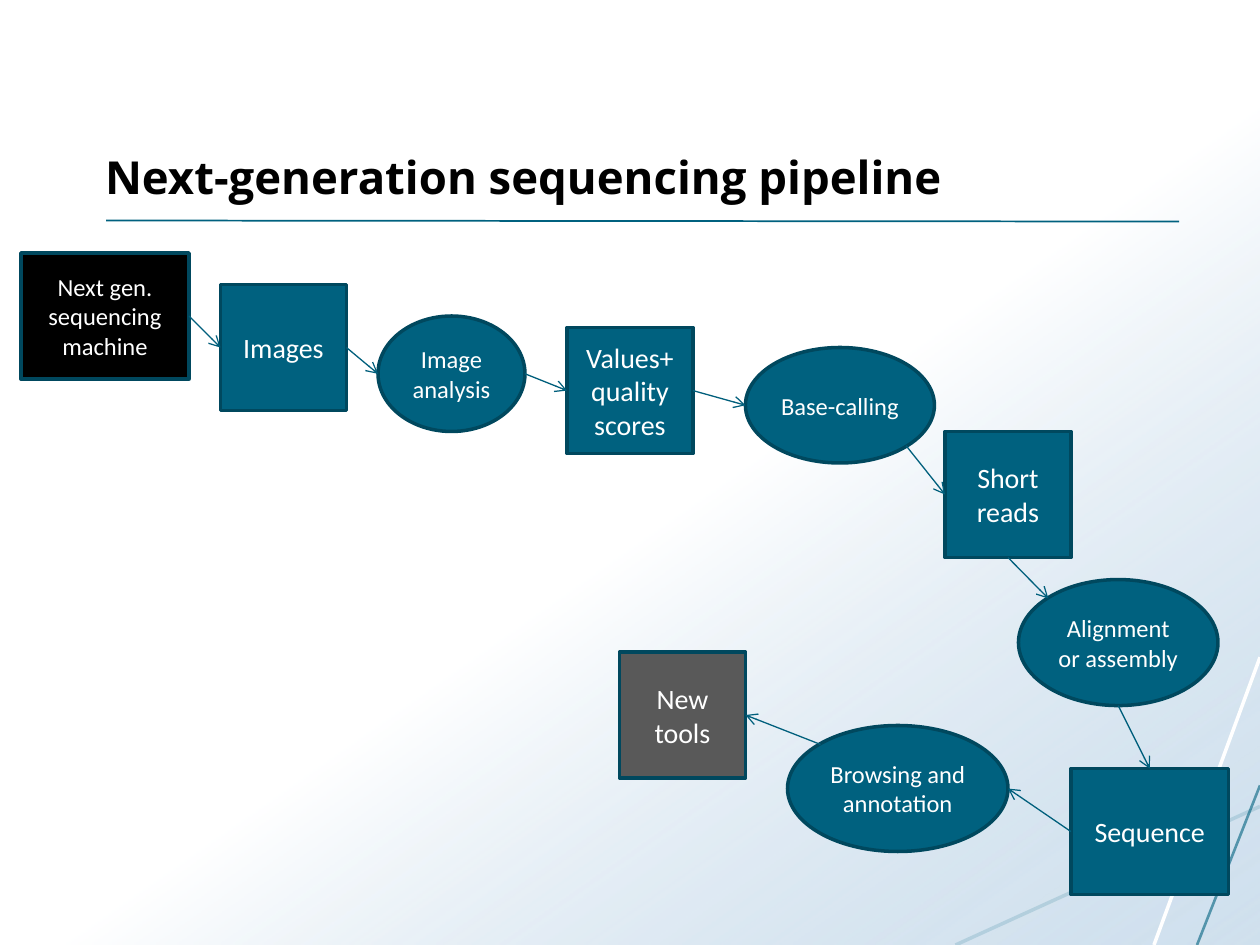
from lxml import etree
from pptx import Presentation
from pptx import util as u
from pptx.dml.color import RGBColor
from pptx.enum import shapes, text
from pptx.oxml.ns import qn

WHITE = RGBColor(0xFF, 0xFF, 0xFF)
BLACK = RGBColor(0x00, 0x00, 0x00)
GREY = RGBColor(0x59, 0x59, 0x59)
TEAL = RGBColor(0x00, 0x61, 0x7F)
DARK_TEAL = RGBColor(0x00, 0x48, 0x5E)
ARROW_TEAL = RGBColor(0x00, 0x5F, 0x7C)
LIGHT_TEAL = RGBColor(0x15, 0x71, 0x8F)
PALE_BLUE = RGBColor(0xA9, 0xC7, 0xE0)

RECT = shapes.MSO_SHAPE.RECTANGLE
OVAL = shapes.MSO_SHAPE.OVAL

prs = Presentation()
prs.slide_width, prs.slide_height = u.Inches(10), u.Inches(7.5)
CELL = prs.slide_width / 120  # grid of 120 columns by 90 rows
s = prs.slides.add_slide(prs.slide_layouts[5])


def grid(*cells):
    return [round(c * CELL) for c in cells]


def add_line(ends, color, width, opacity=100):
    """Draw a plain line; ends are x1, y1, x2, y2 in grid cells."""
    line = s.shapes.add_connector(shapes.MSO_CONNECTOR.STRAIGHT, *grid(*ends))
    line.line.color.rgb = color
    line.line.width = u.Pt(width)
    if opacity < 100:
        clr = line._element.spPr.find(".//" + qn("a:srgbClr"))
        etree.SubElement(clr, qn("a:alpha"), val=str(opacity * 1000))
    etree.SubElement(line._element.spPr, qn("a:effectLst"))
    return line


# Backdrop: diagonal gradient, corner strokes and the rule under the title
backdrop = s.shapes.add_shape(RECT, 0, 0, prs.slide_width, prs.slide_height)
backdrop.shadow.inherit = False
backdrop.line.fill.background()
backdrop.fill.gradient()
backdrop.fill.gradient_angle = 305
for stop, position, color in zip(backdrop.fill.gradient_stops, (0.54, 1), (WHITE, PALE_BLUE)):
    stop.position = position
    stop.color.rgb = color
pale = backdrop._element.spPr.findall(".//" + qn("a:srgbClr"))[-1]
etree.SubElement(pale, qn("a:alpha"), val="54000")

for ends, color, width, opacity in [
    ((120, 62.6, 109.9, 90), WHITE, 2, 100),
    ((120, 76.8, 91, 90), LIGHT_TEAL, 2, 16),
    ((120, 74.8, 114, 90), TEAL, 1.5, 60),
    ((10.1, 21, 112.3, 21.1), TEAL, 1, 100),
]:
    add_line(ends, color, width, opacity)

title = s.shapes.title
s.shapes._spTree.append(title._element)  # bring in front of the backdrop
title.left, title.top, title.width, title.height = grid(8.8, 4, 103.4, 16)
tf = title.text_frame
tf.text = "Next-generation sequencing pipeline"
tf.vertical_anchor = text.MSO_ANCHOR.BOTTOM
p = tf.paragraphs[0]
p.alignment = text.PP_ALIGN.LEFT
p.font.name, p.font.size, p.font.bold = "Open Sans", u.Pt(26), True
p.font.color.rgb = BLACK

# Pipeline steps: text, shape, left, top, width, height, fill, text size
steps = {
    "machine": ("Next gen. sequencing\nmachine", RECT, 2, 24.1, 16, 12, BLACK, 14),
    "images": ("Images", RECT, 21, 27.1, 12, 12, TEAL, 16),
    "analysis": ("Image analysis", OVAL, 36, 30.1, 14, 11, TEAL, 14),
    "values": ("Values+ quality scores", RECT, 54, 31.2, 12, 12, TEAL, 16),
    "calling": ("Base-calling", OVAL, 71, 33.1, 18, 11, TEAL, 14),
    "reads": ("Short reads", RECT, 90, 41.1, 12, 12, TEAL, 16),
    "alignment": ("Alignment or assembly", OVAL, 97, 55.2, 19, 12, TEAL, 14),
    "sequence": ("Sequence", RECT, 102, 73.2, 15, 12, TEAL, 16),
    "browsing": ("Browsing and annotation", OVAL, 75, 69.1, 21, 12, TEAL, 14),
    "tools": ("New tools", RECT, 59, 62.1, 12, 12, GREY, 16),
}
for label, kind, left, top, width, height, fill, size in steps.values():
    sp = s.shapes.add_shape(kind, *grid(left, top, width, height))
    sp.shadow.inherit = False
    sp.fill.solid()
    sp.fill.fore_color.rgb = fill
    sp.line.color.rgb = DARK_TEAL
    sp.line.width = u.Pt(2)
    tf = sp.text_frame
    tf.text = label
    tf.word_wrap = True
    tf.vertical_anchor = text.MSO_ANCHOR.MIDDLE
    if kind == OVAL:
        tf.margin_left = tf.margin_right = tf.margin_top = tf.margin_bottom = u.Inches(0.05)
    for p in tf.paragraphs:
        p.alignment = text.PP_ALIGN.CENTER
        p.font.name, p.font.size = "Calibri", u.Pt(size)
        p.font.color.rgb = WHITE

# Arrows join sites given as shares of a step's width and height
TOP, BOTTOM, LEFT, RIGHT = (0.5, 0), (0.5, 1), (0, 0.5), (1, 0.5)
OVAL_TOP_LEFT, OVAL_BOTTOM_RIGHT = (0.15, 0.15), (0.85, 0.85)
for start, start_site, end, end_site in [
    ("machine", RIGHT, "images", LEFT),
    ("images", RIGHT, "analysis", LEFT),
    ("analysis", RIGHT, "values", LEFT),
    ("values", RIGHT, "calling", LEFT),
    ("calling", OVAL_BOTTOM_RIGHT, "reads", LEFT),
    ("reads", BOTTOM, "alignment", OVAL_TOP_LEFT),
    ("alignment", BOTTOM, "sequence", TOP),
    ("sequence", LEFT, "browsing", RIGHT),
    ("browsing", OVAL_TOP_LEFT, "tools", RIGHT),
]:
    ends = []
    for name, (across, down) in ((start, start_site), (end, end_site)):
        left, top, width, height = steps[name][2:6]
        ends += [left + across * width, top + down * height]
    arrow = add_line(ends, ARROW_TEAL, 0.75)
    etree.SubElement(arrow.line._get_or_add_ln(), qn("a:tailEnd"), type="arrow")

prs.save("out.pptx")
